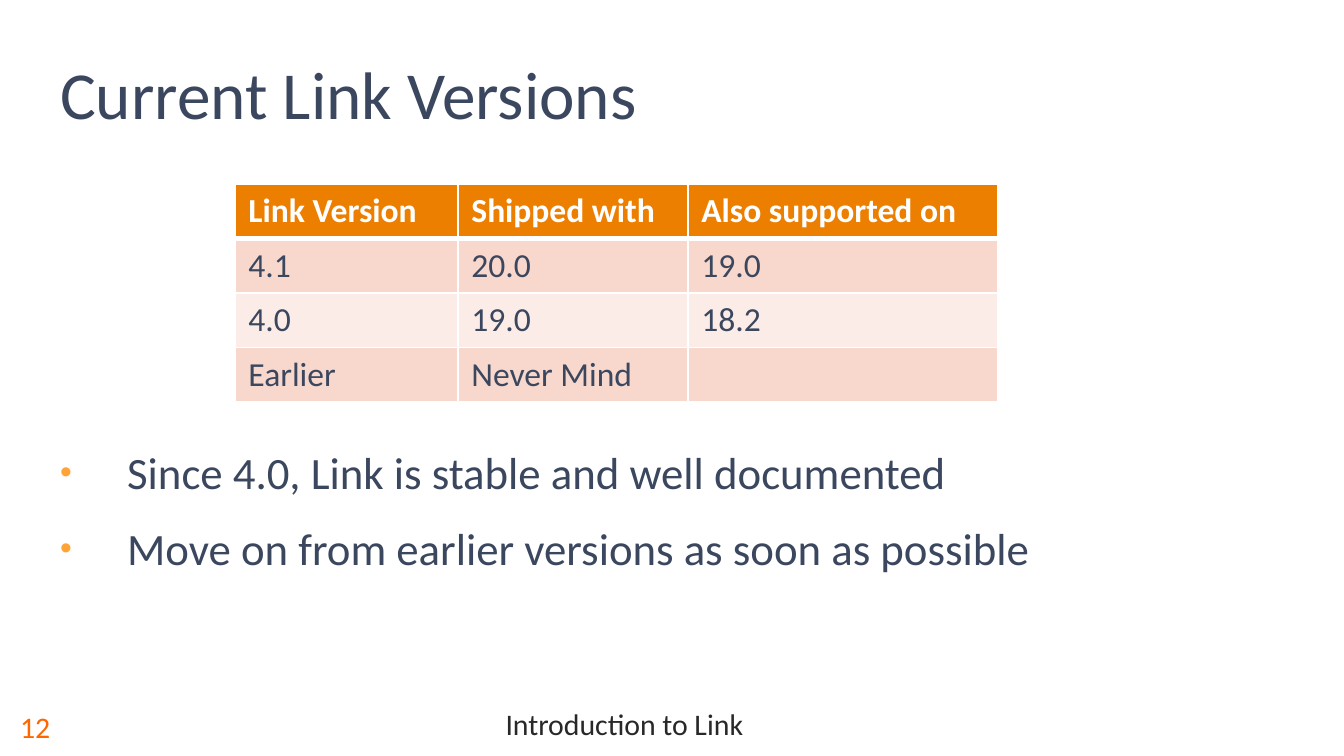
from lxml import etree
from pptx import Presentation
from pptx.dml.color import RGBColor
from pptx.enum.text import MSO_ANCHOR, PP_ALIGN
from pptx.oxml.ns import qn
from pptx.util import Emu, Pt

TOP, MIDDLE, BOTTOM = MSO_ANCHOR.TOP, MSO_ANCHOR.MIDDLE, MSO_ANCHOR.BOTTOM
LEFT, CENTER = PP_ALIGN.LEFT, PP_ALIGN.CENTER

PX_PER_INCH = 134.4
FONT = "Calibri"
NAVY, ORANGE, WHITE = "3B475E", "ED7F00", "FFFFFF"
BANDS = ("F8D8CC", "FCECE7")

VERSIONS = [
    ("Link Version", "Shipped with", "Also supported on"),
    ("4.1", "20.0", "19.0"),
    ("4.0", "19.0", "18.2"),
    ("Earlier", "Never Mind", ""),
]
COLUMN_WIDTHS = (223, 230, 310)
POINTS = [
    "Since 4.0, Link is stable and well documented",
    "Move on from earlier versions as soon as possible",
]


def px(length):
    return Emu(round(length * 914400 / PX_PER_INCH))


def color(value):
    return RGBColor.from_string(value)


def add_bullet(paragraph, bullet_color, indent):
    """Give the paragraph a hanging bullet at 75 % of the text size."""
    properties = paragraph._p.get_or_add_pPr()
    properties.set("marL", str(px(indent)))
    properties.set("indent", str(-px(indent)))
    bullet = etree.SubElement(properties, qn("a:buClr"))
    etree.SubElement(bullet, qn("a:srgbClr"), val=bullet_color)
    etree.SubElement(properties, qn("a:buSzPct"), val="75000")
    etree.SubElement(properties, qn("a:buFont"), typeface="Arial")
    etree.SubElement(properties, qn("a:buChar"), char="•")


def write(paragraph, text, size, text_color=NAVY, bold=False, align=LEFT):
    paragraph.alignment = align
    if not text:
        return
    run = paragraph.add_run()
    run.text = text
    run.font.name = FONT
    run.font.size = Pt(size)
    run.font.bold = bold
    run.font.color.rgb = color(text_color)


def add_text(slide, box, lines, size, anchor=TOP, bullet=None, after=0,
             spacing=None, **text_format):
    """Add a text box with one paragraph for each line."""
    frame = slide.shapes.add_textbox(*map(px, box)).text_frame
    frame.word_wrap = True
    frame.vertical_anchor = anchor
    for index, line in enumerate(lines):
        paragraph = frame.add_paragraph() if index else frame.paragraphs[0]
        if spacing:
            paragraph.line_spacing = spacing
        if after:
            paragraph.space_after = Pt(after)
        if bullet:
            add_bullet(paragraph, bullet, indent=67)
        write(paragraph, line, size, **text_format)


def set_borders(cell, left=1, right=1, top=1, bottom=1):
    """Draw white cell borders with widths in points."""
    properties = cell._tc.get_or_add_tcPr()
    widths = {"lnL": left, "lnR": right, "lnT": top, "lnB": bottom}
    for tag, width in widths.items():
        line = etree.SubElement(properties, qn(f"a:{tag}"), w=str(Pt(width)))
        fill = etree.SubElement(line, qn("a:solidFill"))
        etree.SubElement(fill, qn("a:srgbClr"), val=WHITE)


def add_version_table(slide, box):
    table = slide.shapes.add_table(
        len(VERSIONS), len(COLUMN_WIDTHS), *map(px, box)).table
    for column, width in zip(table.columns, COLUMN_WIDTHS):
        column.width = px(width)
    for row, values in enumerate(VERSIONS):
        header = row == 0
        for column, value in enumerate(values):
            cell = table.cell(row, column)
            set_borders(cell, top=3 if row == 1 else 1,
                        bottom=3 if header else 1)
            cell.fill.solid()
            cell.fill.fore_color.rgb = color(
                ORANGE if header else BANDS[(row - 1) % 2])
            write(cell.text_frame.paragraphs[0], value, 18,
                  text_color=WHITE if header else NAVY, bold=header)


def add_footer(slide, box):
    left, top, width, height = box
    number_width = 98
    add_text(slide, (left + number_width, top, width - number_width, height),
             ["Introduction to Link"], 16, anchor=MIDDLE, spacing=0.8,
             text_color="282828", align=CENTER)
    add_text(slide, (left, top, number_width, height), ["12"], 16,
             anchor=MIDDLE, text_color="FF6600")


def main():
    presentation = Presentation()
    presentation.slide_width, presentation.slide_height = px(1344), px(756)
    slide = presentation.slides.add_slide(presentation.slide_layouts[6])
    add_footer(slide, (7, 698, 1137, 58))
    add_version_table(slide, (235, 184, sum(COLUMN_WIDTHS), 218))
    add_text(slide, (47, 438, 1177, 198), POINTS, 24, bullet="FFA336", after=12)
    add_text(slide, (47, 39, 1030, 101), ["Current Link Versions"], 36,
             anchor=BOTTOM)
    presentation.save("out.pptx")


if __name__ == "__main__":
    main()
